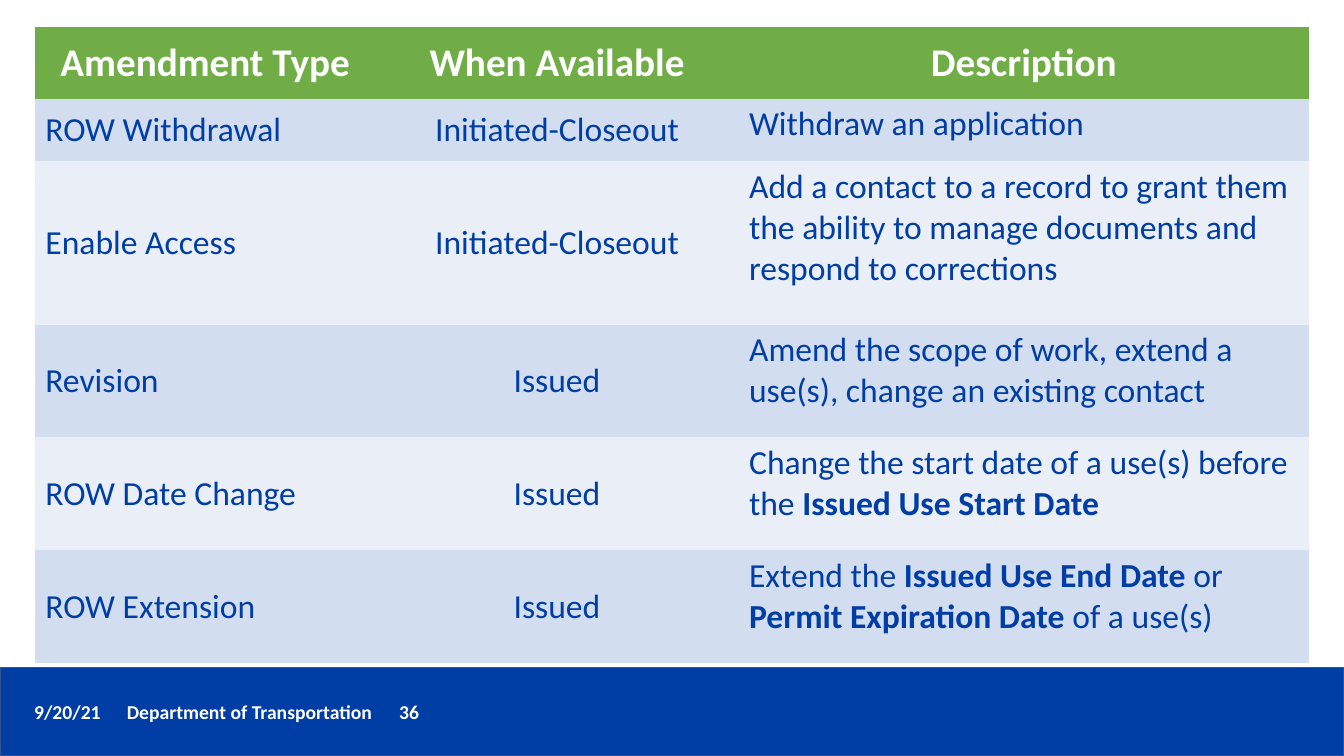
from dataclasses import dataclass

from lxml.etree import SubElement
from pptx import Presentation
from pptx.dml.color import RGBColor
from pptx.enum.shapes import MSO_SHAPE as Shape
from pptx.enum.text import MSO_ANCHOR as Anchor, PP_ALIGN as Align
from pptx.oxml.ns import qn
from pptx.slide import Slide
from pptx.table import _Cell as Cell
from pptx.text.text import _Paragraph as Paragraph
from pptx.util import Inches, Pt


@dataclass(frozen=True)
class Theme:
    font: str = "Calibri"
    blue: str = "003DA5"
    green: str = "70AD47"
    white: str = "FFFFFF"
    outline: str = "31538F"
    bands: tuple[str, str] = ("D2DEEF", "EAEFF7")
    header_size: int = 28
    body_size: int = 24
    footer_size: int = 14


@dataclass(frozen=True)
class Span:
    text: str
    bold: bool = False


@dataclass(frozen=True)
class Amendment:
    kind: str
    available: str
    description: tuple[Span, ...]
    height: float


THEME = Theme()
NO_STYLE_NO_GRID = "{2D5ABB26-0587-4C30-8999-92F81FD0307C}"
HEADERS = ("Amendment Type", "When Available", "Description")
COLUMN_WIDTHS = (3.37, 3.61, 5.65)
HEADER_HEIGHT = 0.71
FOOTER_ITEMS = ("9/20/21", "Department of Transportation", "36")
FOOTER_TABS = (0.92, 3.62)
AMENDMENTS = (
    Amendment("ROW Withdrawal", "Initiated-Closeout",
              (Span("Withdraw an application"),), 0.62),
    Amendment("Enable Access", "Initiated-Closeout",
              (Span("Add a contact to a record to grant them the ability to "
                    "manage documents and respond to corrections"),), 1.62),
    Amendment("Revision", "Issued",
              (Span("Amend the scope of work, extend a use(s), "
                    "change an existing contact"),), 1.12),
    Amendment("ROW Date Change", "Issued",
              (Span("Change the start date of a use(s) before the "),
               Span("Issued Use Start Date", True)), 1.12),
    Amendment("ROW Extension", "Issued",
              (Span("Extend the "), Span("Issued Use End Date ", True),
               Span("or "), Span("Permit Expiration Date ", True),
               Span("of a use(s)")), 1.12),
)


def write(para: Paragraph, spans: tuple[Span, ...], size: int, color: str,
          align: Align = Align.LEFT) -> None:
    para.alignment = align
    font = para.font
    font.name = THEME.font
    font.size = Pt(size)
    font.color.rgb = RGBColor.from_string(color)
    weights = {span.bold for span in spans}
    if len(weights) == 1:
        font.bold = spans[0].bold
    for span in spans:
        run = para.add_run()
        run.text = span.text
        if len(weights) > 1:
            run.font.bold = span.bold


def fill_cell(cell: Cell, spans: tuple[Span, ...], fill: str, size: int,
              color: str, align: Align, anchor: Anchor) -> None:
    cell.fill.solid()
    cell.fill.fore_color.rgb = RGBColor.from_string(fill)
    cell.vertical_anchor = anchor
    write(cell.text_frame.paragraphs[0], spans, size, color, align)


def add_footer(page: Slide) -> None:
    band = page.shapes.add_shape(
        Shape.RECTANGLE, Inches(0), Inches(6.62), Inches(13.33), Inches(0.88))
    band.shadow.inherit = False
    band.fill.solid()
    band.fill.fore_color.rgb = RGBColor.from_string(THEME.blue)
    band.line.color.rgb = RGBColor.from_string(THEME.outline)
    band.line.width = Pt(1)

    box = page.shapes.add_textbox(
        Inches(0.24), Inches(6.89), Inches(10.06), Inches(0.34))
    box.text_frame.word_wrap = True
    para = box.text_frame.paragraphs[0]
    tabs = SubElement(para._p.get_or_add_pPr(), qn("a:tabLst"))
    for position in FOOTER_TABS:
        SubElement(tabs, qn("a:tab"), pos=str(Inches(position)), algn="l")
    write(para, (Span("\t".join(FOOTER_ITEMS), True),),
          THEME.footer_size, THEME.white)


def add_amendment_table(page: Slide) -> None:
    heights = (HEADER_HEIGHT, *(item.height for item in AMENDMENTS))
    frame = page.shapes.add_table(
        len(heights), len(HEADERS), Inches(0.35), Inches(0.27),
        Inches(sum(COLUMN_WIDTHS)), Inches(sum(heights)))
    table = frame.table
    table.first_row = False
    table.horz_banding = False
    table._tbl.tblPr.find(qn("a:tableStyleId")).text = NO_STYLE_NO_GRID
    for column, width in zip(table.columns, COLUMN_WIDTHS):
        column.width = Inches(width)
    for row, height in zip(table.rows, heights):
        row.height = Inches(height)

    for index, header in enumerate(HEADERS):
        fill_cell(table.cell(0, index), (Span(header, True),), THEME.green,
                  THEME.header_size, THEME.white, Align.CENTER, Anchor.MIDDLE)
    for index, item in enumerate(AMENDMENTS):
        columns = (
            ((Span(item.kind),), Align.LEFT, Anchor.MIDDLE),
            ((Span(item.available),), Align.CENTER, Anchor.MIDDLE),
            (item.description, Align.LEFT, Anchor.TOP),
        )
        for position, (spans, align, anchor) in enumerate(columns):
            fill_cell(table.cell(index + 1, position), spans,
                      THEME.bands[index % 2], THEME.body_size, THEME.blue,
                      align, anchor)


def main() -> None:
    deck = Presentation()
    deck.slide_width = Inches(13.33)
    deck.slide_height = Inches(7.5)
    page = deck.slides.add_slide(deck.slide_layouts.get_by_name("Blank"))
    add_footer(page)
    add_amendment_table(page)
    deck.save("out.pptx")


if __name__ == "__main__":
    main()
